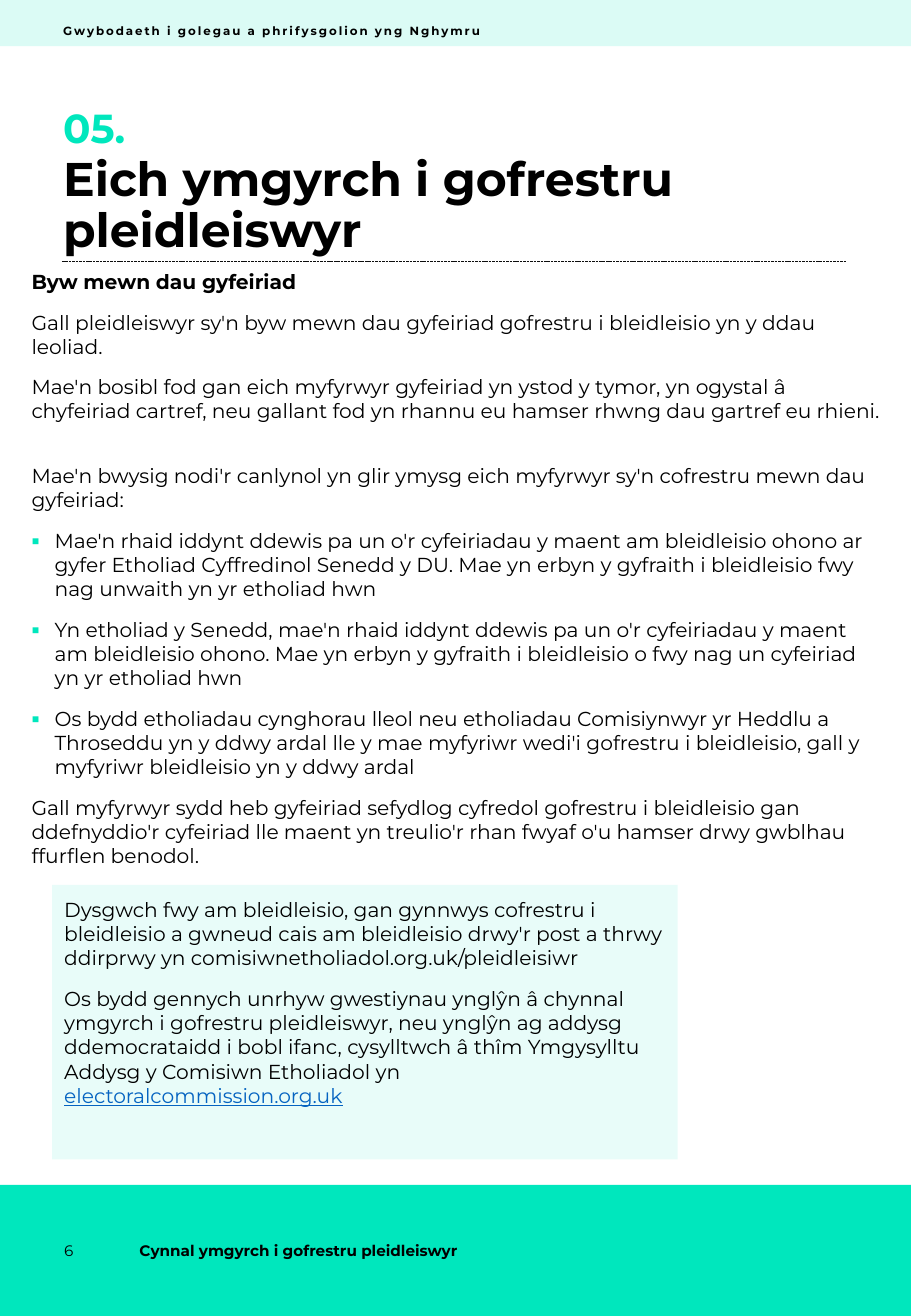
from lxml.etree import SubElement
from pptx import Presentation
from pptx.dml.color import RGBColor
from pptx.enum.dml import MSO_LINE
from pptx.enum.shapes import MSO_CONNECTOR, MSO_SHAPE
from pptx.enum.text import MSO_ANCHOR, MSO_AUTO_SIZE, PP_ALIGN
from pptx.oxml.ns import qn
from pptx.util import Pt

PX = 9144  # 100 px to the inch
FONT = "Montserrat"
MINT, BLACK, LINK_BLUE = "00E7BD", "000000", "0563C1"


def colour(target, hex_code):
    target.rgb = RGBColor.from_string(hex_code)


def write(shape, paragraphs, size, hex_code=BLACK, bold=False, inset=(0, 0),
          anchor=MSO_ANCHOR.TOP):
    frame = shape.text_frame
    frame.word_wrap = True
    frame.auto_size = MSO_AUTO_SIZE.NONE
    frame.vertical_anchor = anchor
    frame.margin_left = frame.margin_right = inset[0] * PX
    frame.margin_top = frame.margin_bottom = inset[1] * PX
    for index, text in enumerate(paragraphs):
        paragraph = frame.add_paragraph() if index else frame.paragraphs[0]
        paragraph.alignment = PP_ALIGN.LEFT
        paragraph.space_before = Pt(7.5 if index else 0)
        paragraph.space_after = Pt(2)
        run = paragraph.add_run()
        run.text = text
        run.font.name, run.font.size, run.font.bold = FONT, Pt(size), bold
        colour(run.font.color, hex_code)
    return frame.paragraphs


prs = Presentation()
prs.slide_width, prs.slide_height = 750 * PX, 1084 * PX
slide = prs.slides.add_slide(prs.slide_layouts[5])
shapes = slide.shapes

# Mint areas: footer band, header band and contact panel, with opacity in percent
areas = []
for left, top, width, height, opacity in [
    (0, 976, 750, 108, 100),
    (0, 0, 750, 38, 14),
    (43, 729, 515, 226, 9),
]:
    area = shapes.add_shape(MSO_SHAPE.RECTANGLE, left * PX, top * PX, width * PX, height * PX)
    area.shadow.inherit = False
    area.line.fill.background()
    area.fill.solid()
    colour(area.fill.fore_color, MINT)
    if opacity < 100:
        tint = area.fill._xPr.find(qn("a:solidFill"))[0]
        SubElement(tint, qn("a:alpha"), val=str(opacity * 1000))
    areas.append(area)
contact_panel = areas[-1]

# Running header
header = shapes.add_textbox(52 * PX, 7 * PX, 420 * PX, 37 * PX)
header_line = write(header, ["Gwybodaeth i golegau a phrifysgolion yng Nghymru"], 7,
                    bold=True, anchor=MSO_ANCHOR.MIDDLE)[0]
header_line.runs[0].font._element.set("spc", "120")

# Section number, title and rule
section_number = shapes.add_textbox(52 * PX, 85 * PX, 646 * PX, 37 * PX)
write(section_number, ["05."], 24, MINT, bold=True)

title = shapes.title
title.left, title.top, title.width, title.height = 52 * PX, 128 * PX, 646 * PX, 88 * PX
heading = write(title, ["Eich ymgyrch i gofrestru pleidleiswyr"], 28, bold=True)[0]
heading.line_spacing = 0.9

rule = shapes.add_connector(MSO_CONNECTOR.STRAIGHT, 51 * PX, 215 * PX, 697 * PX, 215 * PX)
colour(rule.line.color, "0D0D0D")
rule.line.width = Pt(0.5)
rule.line.dash_style = MSO_LINE.SQUARE_DOT
SubElement(rule._element.spPr, qn("a:effectLst"))

# Body text
body = shapes.add_textbox(26 * PX, 222 * PX, 703 * PX, 487 * PX)
body_lines = write(body, [
    "Byw mewn dau gyfeiriad",
    "Gall pleidleiswyr sy'n byw mewn dau gyfeiriad gofrestru i bleidleisio yn y ddau leoliad.",
    "Mae'n bosibl fod gan eich myfyrwyr gyfeiriad yn ystod y tymor, yn ogystal â chyfeiriad "
    "cartref, neu gallant fod yn rhannu eu hamser rhwng dau gartref eu rhieni.",
    "Mae'n bwysig nodi'r canlynol yn glir ymysg eich myfyrwyr sy'n cofrestru mewn dau gyfeiriad:",
    "Mae'n rhaid iddynt ddewis pa un o'r cyfeiriadau y maent am bleidleisio ohono ar gyfer "
    "Etholiad Cyffredinol Senedd y DU. Mae yn erbyn y gyfraith i bleidleisio fwy nag unwaith "
    "yn yr etholiad hwn",
    "Yn etholiad y Senedd, mae'n rhaid iddynt ddewis pa un o'r cyfeiriadau y maent am "
    "bleidleisio ohono. Mae yn erbyn y gyfraith i bleidleisio o fwy nag un cyfeiriad yn yr "
    "etholiad hwn",
    "Os bydd etholiadau cynghorau lleol neu etholiadau Comisiynwyr yr Heddlu a Throseddu yn y "
    "ddwy ardal lle y mae myfyriwr wedi'i gofrestru i bleidleisio, gall y myfyriwr bleidleisio "
    "yn y ddwy ardal",
    "Gall myfyrwyr sydd heb gyfeiriad sefydlog cyfredol gofrestru i bleidleisio gan "
    "ddefnyddio'r cyfeiriad lle maent yn treulio'r rhan fwyaf o'u hamser drwy gwblhau "
    "ffurflen benodol.",
], 12)
body_lines[0].runs[0].font.bold = True
body_lines[3].space_before = Pt(22)

for rule_item in body_lines[4:7]:
    properties = rule_item._p.get_or_add_pPr()
    properties.set("marL", str(19 * PX))
    properties.set("indent", str(-19 * PX))
    bullet_colour = SubElement(properties, qn("a:buClr"))
    SubElement(bullet_colour, qn("a:srgbClr"), val=MINT)
    SubElement(properties, qn("a:buFont"), typeface=FONT)
    SubElement(properties, qn("a:buChar"), char="▪")

# Contact panel
contact_lines = write(contact_panel, [
    "Dysgwch fwy am bleidleisio, gan gynnwys cofrestru i bleidleisio a gwneud cais am "
    "bleidleisio drwy'r post a thrwy ddirprwy yn comisiwnetholiadol.org.uk/pleidleisiwr",
    "Os bydd gennych unrhyw gwestiynau ynglŷn â chynnal ymgyrch i gofrestru pleidleiswyr, neu "
    "ynglŷn ag addysg ddemocrataidd i bobl ifanc, cysylltwch â thîm Ymgysylltu Addysg y "
    "Comisiwn Etholiadol yn ",
], 12, inset=(10, 10))
website = contact_lines[1].add_run()
website.text = "electoralcommission.org.uk"
website.font.name, website.font.size, website.font.underline = FONT, Pt(12), True
colour(website.font.color, LINK_BLUE)

# Footer
for left, width, text, bold in [
    (43, 62, "6", False),
    (105, 317, "Cynnal ymgyrch i gofrestru pleidleiswyr", True),
]:
    footer = shapes.add_textbox(left * PX, 976 * PX, width * PX, 108 * PX)
    footer_line = write(footer, [text], 9, bold=bold, inset=(10, 5),
                        anchor=MSO_ANCHOR.MIDDLE)[0]
    footer_line.space_after = Pt(0)

prs.save("out.pptx")
